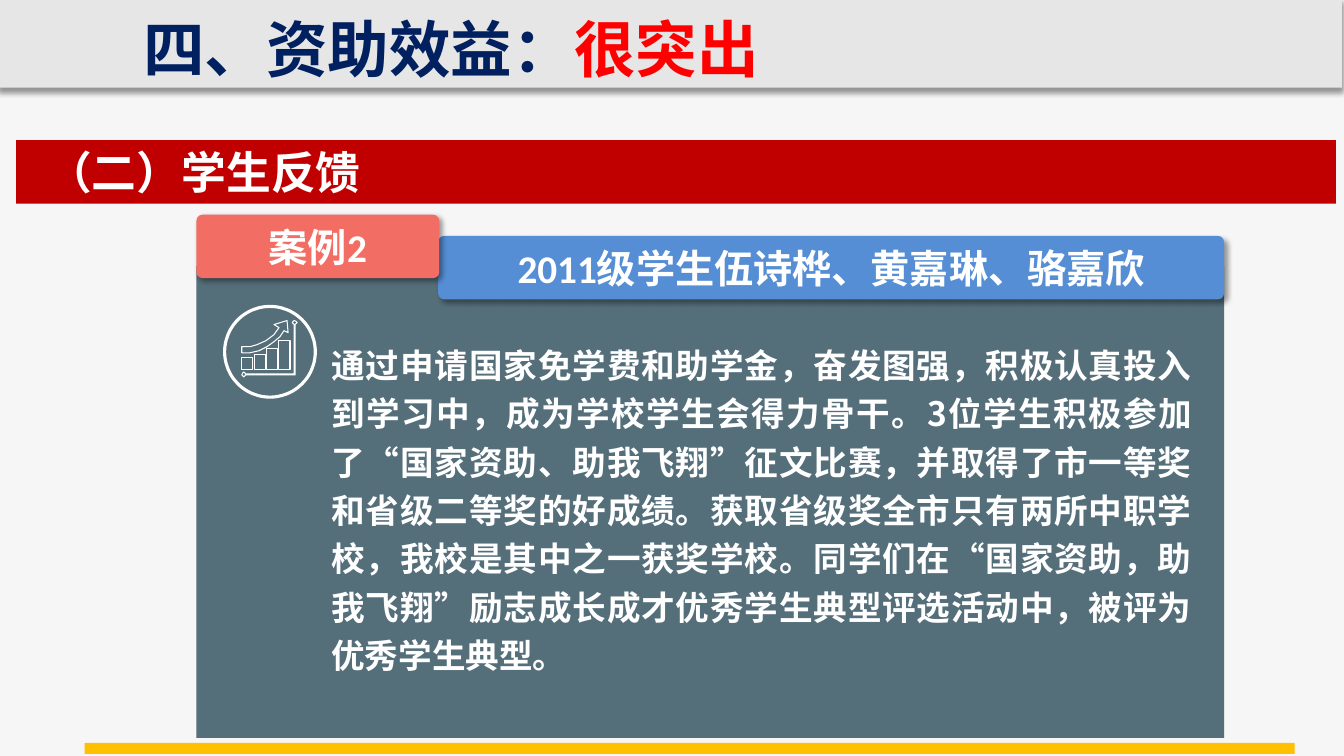
"""Builds the student feedback slide for case 2."""
from lxml import etree
from pptx import Presentation
from pptx.dml.color import RGBColor
from pptx.enum.shapes import MSO_SHAPE
from pptx.enum.text import MSO_ANCHOR, PP_ALIGN
from pptx.oxml.ns import qn
from pptx.util import Inches, Pt

RECT, ROUND, OVAL = MSO_SHAPE.RECTANGLE, MSO_SHAPE.ROUNDED_RECTANGLE, MSO_SHAPE.OVAL
TOP, MIDDLE = MSO_ANCHOR.TOP, MSO_ANCHOR.MIDDLE
LEFT, CENTER, JUSTIFY = PP_ALIGN.LEFT, PP_ALIGN.CENTER, PP_ALIGN.JUSTIFY
CJK, LATIN = "Noto Sans CJK SC", "Calibri"
COLORS = {"page": "F6F6F6", "header": "E6E6E6", "navy": "002060", "red": "FF0000",
          "band": "C00000", "gold": "FFC000", "slate": "546E7A", "blue": "558ED5",
          "coral": "F26D64", "white": "FFFFFF", "black": "000000"}

TITLE = [("四、资助效益：", "navy"), ("很突出", "red")]
SECTION = "（二）学生反馈"
STORY = ("通过申请国家免学费和助学金，奋发图强，积极认真投入到学习中，成为学校学生会得力骨干。"
         "3位学生积极参加了“国家资助、助我飞翔”征文比赛，并取得了市一等奖和省级二等奖的好成绩。"
         "获取省级奖全市只有两所中职学校，我校是其中之一获奖学校。同学们在“国家资助，助我飞翔”"
         "励志成长成才优秀学生典型评选活动中，被评为优秀学生典型。")
PANELS = [
    ((-0.02, -0.03, 13.34, 0.9), "header", 90),
    ((0.16, 1.39, 13.1, 0.63), "band", None),
    ((0.84, 7.37, 12.01, 0.11), "gold", None),
    ((1.95, 2.64, 10.2, 4.68), "slate", None),
]
TABS = [
    ((4.35, 2.34, 7.8, 0.63), "blue", "2011级学生伍诗桦、黄嘉琳、骆嘉欣"),
    ((1.95, 2.13, 2.41, 0.63), "coral", "案例2"),
]
BAR_TOPS, BAR_BASE = [3.55, 3.52, 3.46, 3.38], 3.67
ARROW = [(2.85, 3.18), (2.72, 3.22), (2.77, 3.25), (2.72, 3.32), (2.64, 3.38),
         (2.55, 3.42), (2.48, 3.44), (2.4, 3.44), (2.4, 3.5), (2.48, 3.5),
         (2.57, 3.48), (2.65, 3.44), (2.72, 3.39), (2.78, 3.34), (2.82, 3.28),
         (2.86, 3.3)]
AXES = [(2.92, 3.18), (2.91, 3.19), (2.9, 3.2), (2.91, 3.21), (2.92, 3.22),
        (2.92, 3.71), (2.44, 3.71), (2.43, 3.7), (2.42, 3.69), (2.41, 3.7),
        (2.4, 3.72), (2.41, 3.73), (2.42, 3.74), (2.43, 3.73), (2.44, 3.72),
        (2.93, 3.72), (2.93, 3.22), (2.94, 3.21), (2.95, 3.2), (2.94, 3.19)]


def rgb(name):
    return RGBColor.from_string(COLORS[name])


def add_shadow(shape, angle):
    effects = shape.element.spPr.find(qn("a:effectLst"))
    shadow = etree.SubElement(effects, qn("a:outerShdw"), blurRad=str(Pt(4)),
                              dist=str(Pt(3)), dir=str(angle * 60000), algn="t", rotWithShape="0")
    color = etree.SubElement(shadow, qn("a:srgbClr"), val=COLORS["black"])
    etree.SubElement(color, qn("a:alpha"), val="40000")


def add_panel(page, kind, place, color, angle=None):
    shape = page.shapes.add_shape(kind, *map(Inches, place))
    shape.shadow.inherit = False
    shape.fill.solid()
    shape.fill.fore_color.rgb = rgb(color)
    shape.line.fill.background()
    if angle is not None:
        add_shadow(shape, angle)
    return shape


def outline(shape, width=0.75):
    shape.shadow.inherit = False
    shape.fill.background()
    shape.line.color.rgb = rgb("white")
    shape.line.width = Pt(width)


def add_outline(page, points):
    start, *rest = [(Inches(x), Inches(y)) for x, y in points]
    builder = page.shapes.build_freeform(*start)
    builder.add_line_segments(rest, close=True)
    outline(builder.convert_to_shape())


def write(shape, spans, size, font=CJK, anchor=TOP, align=LEFT, spacing=1.0):
    frame = shape.text_frame
    frame_format = {"word_wrap": True, "vertical_anchor": anchor,
                    "margin_left": Inches(0.1), "margin_right": Inches(0.1),
                    "margin_top": Inches(0.05), "margin_bottom": Inches(0.05)}
    for name, value in frame_format.items():
        setattr(frame, name, value)
    para = frame.paragraphs[0]
    para.alignment, para.line_spacing = align, spacing
    for text, color in spans:
        span = para.add_run()
        span.text = text
        for name, value in {"size": Pt(size), "bold": True, "name": font}.items():
            setattr(span.font, name, value)
        span.font.color.rgb = rgb(color)
        latin = span.font._element.find(qn("a:latin"))
        latin.addnext(etree.Element(qn("a:ea"), typeface=CJK))


def add_text(page, place, text, size, **options):
    box = page.shapes.add_textbox(*map(Inches, place))
    write(box, [(text, "white")], size, **options)


def main():
    deck = Presentation()
    deck.slide_width, deck.slide_height = Inches(13.34), Inches(7.5)
    page = deck.slides.add_slide(deck.slide_layouts[5])
    page.background.fill.solid()
    page.background.fill.fore_color.rgb = rgb("page")

    for place, color, angle in PANELS:
        add_panel(page, RECT, place, color, angle)
    title = page.shapes.title
    title.left, title.top, title.width, title.height = map(Inches, (1.32, 0.05, 11.95, 0.84))
    write(title, TITLE, 44, anchor=MIDDLE)
    page.shapes.element.append(title.element)
    add_text(page, (0.37, 1.38, 11.34, 0.64), SECTION, 32, anchor=MIDDLE)

    for place, color, text in TABS:
        tab = add_panel(page, ROUND, place, color, 45)
        tab.adjustments[0] = 0.096
        write(tab, [(text, "white")], 28, font=LATIN, anchor=MIDDLE, align=CENTER)
    add_text(page, (3.19, 3.29, 8.74, 3.49), STORY, 24, align=JUSTIFY, spacing=1.2)

    outline(page.shapes.add_shape(OVAL, *map(Inches, (2.23, 3.04, 0.9, 0.9))), 2.25)
    add_outline(page, ARROW)
    for index, top in enumerate(BAR_TOPS):
        place = (2.4 + 0.123 * index, top, 0.11, BAR_BASE - top)
        outline(page.shapes.add_shape(RECT, *map(Inches, place)))
    add_outline(page, AXES)
    deck.save("out.pptx")


if __name__ == "__main__":
    main()
